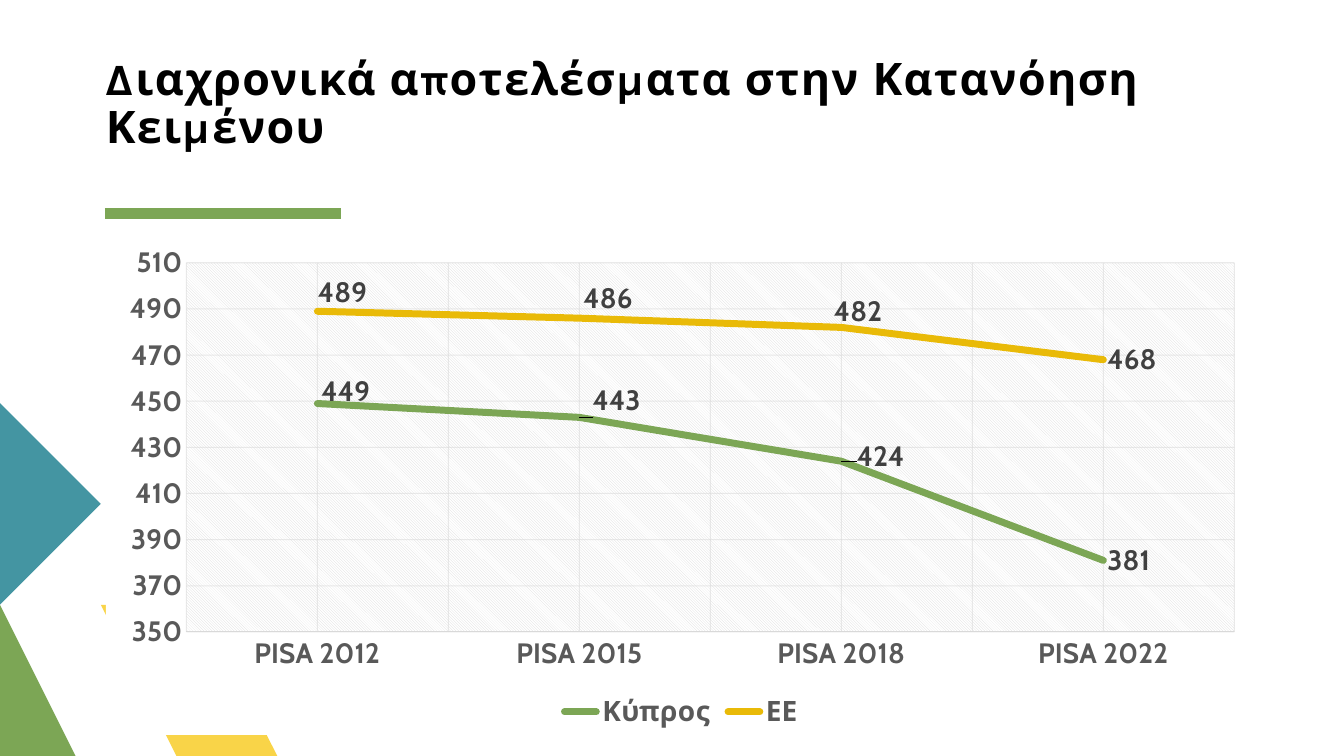
from lxml import etree
from pptx import Presentation
from pptx.chart.data import CategoryChartData
from pptx.dml.color import RGBColor
from pptx.enum.chart import XL_CHART_TYPE as ChartType, XL_LABEL_POSITION as LabelPos
from pptx.enum.chart import XL_LEGEND_POSITION as LegendPos, XL_TICK_MARK as TickMark
from pptx.enum.shapes import MSO_CONNECTOR as Connector
from pptx.enum.text import MSO_ANCHOR as Anchor, MSO_AUTO_SIZE as AutoSize
from pptx.oxml import parse_xml
from pptx.oxml.ns import nsdecls, qn
from pptx.util import Inches, Pt

GREEN, YELLOW, TEAL, GOLD = "7CA655", "F9D448", "4495A2", "E9BA08"
GREY, DARK, GRID = "595959", "404040", "D9D9D9"
LEFT, WIDTH = Inches(1.05), Inches(11.41)


def rgb(value):
    return RGBColor.from_string(value)


def style_font(font, color, size=20, name="Cabin"):
    font.name, font.size, font.bold = name, Pt(size), True
    font.color.rgb = rgb(color)


prs = Presentation()
prs.slide_width, prs.slide_height = Inches(13.33), Inches(7.5)
slide = prs.slides.add_slide(prs.slide_layouts[5])
shapes = slide.shapes

# Corner decoration
corner_pieces = [
    (YELLOW, [(3.24, 7.5), (2.15, 7.5), (1.06, 6.41), (1.61, 5.87)]),
    (GREEN, [(1.06, 7.5), (0, 7.5), (0, 6.44)]),
    (TEAL, [(0, 4.27), (1.06, 5.33), (0, 6.39)]),
]
for color, (start, *rest) in corner_pieces:
    builder = shapes.build_freeform(*start, scale=Inches(1))
    builder.add_line_segments(rest, close=True)
    piece = builder.convert_to_shape()
    piece.shadow.inherit = False
    piece.fill.solid()
    piece.fill.fore_color.rgb = rgb(color)
    piece.line.fill.background()

# Title and its rule
title = shapes.title
title.left, title.top, title.width, title.height = LEFT, Inches(0.85), WIDTH, Inches(0.67)
frame = title.text_frame
frame.text = "Διαχρονικά αποτελέσματα στην Κατανόηση Κειμένου"
frame.word_wrap, frame.auto_size, frame.vertical_anchor = True, AutoSize.NONE, Anchor.BOTTOM
frame.margin_left = frame.margin_right = frame.margin_top = frame.margin_bottom = 0
heading = frame.paragraphs[0]
heading.alignment, heading.line_spacing = 1, 0.9
style_font(heading.runs[0].font, "000000", 32, "Karla")
heading.runs[0].font._element.set("spc", "100")

rule = shapes.add_connector(Connector.STRAIGHT, Inches(1.04), Inches(2.12), Inches(3.38), Inches(2.12))
rule.line.color.rgb, rule.line.width = rgb(GREEN), Pt(8)
etree.SubElement(rule._element.spPr, qn("a:effectLst"))

# Chart; each label shift is a share of the chart's width and height
results = [
    ("Κύπρος", GREEN, (449, 443, 424, 381), [(0, -0.024), (0.008, -0.034), (0.01, -0.01)]),
    ("ΕΕ", GOLD, (489, 486, 482, 468), [(-0.003, -0.038), (0, -0.04), (-0.01, -0.032)]),
]
data = CategoryChartData(number_format="0")
data.categories = [f"PISA {year}" for year in (2012, 2015, 2018, 2022)]
for name, _, scores, _ in results:
    data.add_series(name, scores)
chart = shapes.add_chart(ChartType.LINE, LEFT, Inches(2.34), WIDTH, Inches(4.95), data).chart
chart.has_title = False
style_font(chart.font, GREY)
chart.has_legend = True
chart.legend.position, chart.legend.include_in_layout = LegendPos.BOTTOM, False
style_font(chart.legend.font, GREY)

years, points = chart.category_axis, chart.value_axis
points.minimum_scale, points.maximum_scale, points.major_unit = 350, 510, 20
points.tick_labels.number_format, points.tick_labels.number_format_is_linked = "0", False
years.has_major_gridlines = years.has_minor_gridlines = True
for axis in (years, points):
    axis.major_tick_mark = axis.minor_tick_mark = TickMark.NONE
    style_font(axis.tick_labels.font, GREY)
for grid in (years.major_gridlines, points.major_gridlines):
    grid.format.line.color.rgb, grid.format.line.width = rgb(GRID), Pt(0.75)
    for tint in grid._xAx.findall(f"{qn('c:majorGridlines')}//{qn('a:srgbClr')}"):
        etree.SubElement(tint, qn("a:alpha"), val="54000")
minor_grid = years._element.find(qn("c:minorGridlines"))
major_grid = years._element.find(qn("c:majorGridlines"))
minor_grid.append(parse_xml(etree.tostring(major_grid[0])))
years.format.line.color.rgb, years.format.line.width = rgb(GRID), Pt(0.75)
points.format.line.fill.background()

for series, (_, color, _, shifts) in zip(chart.plots[0].series, results):
    series.smooth = False
    series.format.line.color.rgb, series.format.line.width = rgb(color), Pt(5)
    series.format.line._ln.set("cap", "rnd")
    series.marker.style = None
    series.marker._element.get_or_add_marker().get_or_add_symbol().set("val", "none")
    labels = series.data_labels
    labels.show_value, labels.position = True, LabelPos.RIGHT
    labels.number_format, labels.number_format_is_linked = "0", False
    style_font(labels.font, DARK)
    for index, (dx, dy) in enumerate(shifts):
        label = series.points[index].data_label
        label.position = LabelPos.RIGHT
        style_font(label.font, DARK)
        labels._element.findall(qn("c:dLbl"))[index].insert(1, parse_xml(
            f'<c:layout {nsdecls("c")}><c:manualLayout><c:x val="{dx}"/><c:y val="{dy}"/>'
            "</c:manualLayout></c:layout>"))

# Plot position, hatching and white chart ground
plot_area = chart._chartSpace.chart.plotArea
for old in plot_area.findall(qn("c:layout")):
    plot_area.remove(old)
plot_area.insert(0, parse_xml(
    f'<c:layout {nsdecls("c")}><c:manualLayout><c:layoutTarget val="inner"/>'
    '<c:xMode val="edge"/><c:yMode val="edge"/><c:x val="0.07"/><c:y val="0.054"/>'
    '<c:w val="0.911"/><c:h val="0.74"/></c:manualLayout></c:layout>'))
plot_area.append(parse_xml(
    f'<c:spPr {nsdecls("c", "a")}><a:pattFill prst="ltDnDiag"><a:fgClr><a:srgbClr val="{GRID}"/></a:fgClr>'
    '<a:bgClr><a:srgbClr val="FFFFFF"/></a:bgClr></a:pattFill><a:ln><a:noFill/></a:ln></c:spPr>'))
chart._chartSpace.chart.addnext(parse_xml(
    f'<c:spPr {nsdecls("c", "a")}><a:solidFill><a:srgbClr val="FFFFFF"/></a:solidFill>'
    "<a:ln><a:noFill/></a:ln></c:spPr>"))

prs.save("out.pptx")
